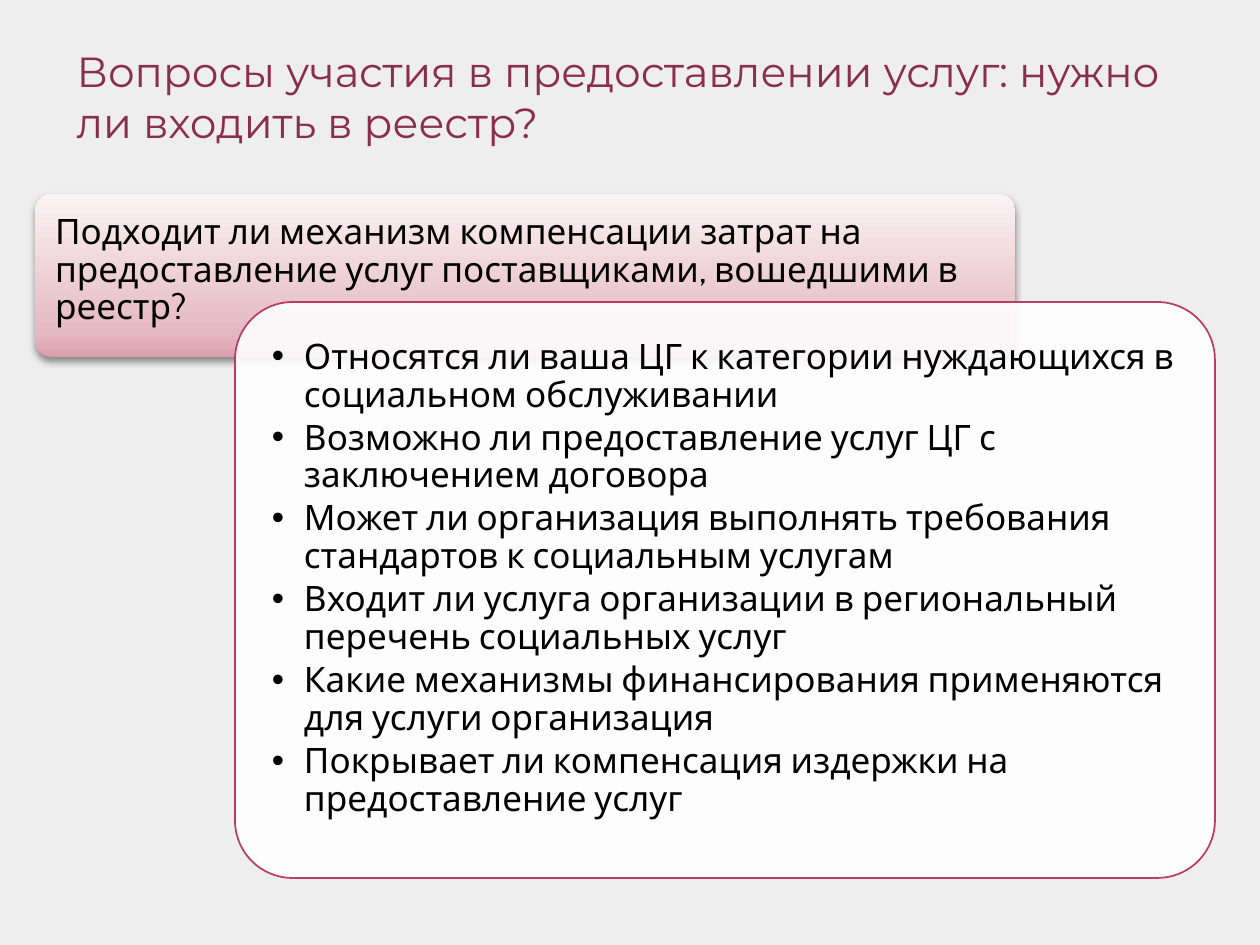
from dataclasses import dataclass

from lxml.etree import SubElement
from pptx import Presentation
from pptx.dml.color import RGBColor
from pptx.enum.shapes import MSO_SHAPE
from pptx.enum.text import MSO_ANCHOR, MSO_AUTO_SIZE, PP_ALIGN
from pptx.oxml.ns import qn
from pptx.util import Pt

TITLE = "Вопросы участия в предоставлении услуг: нужно ли входить в реестр?"
QUESTION = ("Подходит ли механизм компенсации затрат на предоставление услуг "
            "поставщиками, вошедшими в реестр?")
CHECKS = [
    "Относятся ли ваша ЦГ к категории нуждающихся в социальном обслуживании",
    "Возможно ли предоставление услуг ЦГ с заключением договора",
    "Может ли организация выполнять требования стандартов к социальным услугам",
    "Входит ли услуга организации в региональный перечень социальных услуг",
    "Какие механизмы финансирования применяются для услуги организация",
    "Покрывает ли компенсация издержки на предоставление услуг",
]


@dataclass(frozen=True)
class Theme:
    background: str = "EEEEEE"
    title: str = "8A2E4E"
    text: str = "000000"
    panel: str = "FFFFFF"
    border: str = "B83D68"
    shadow: str = "000000"
    gradient: tuple = ((0, "DC9FAD"), (15, "E5B9C3"), (100, "FAF3F5"))
    title_font: str = "Montserrat"
    body_font: str = "Cabin"
    title_size: int = 24
    body_size: int = 20


THEME = Theme()
SCALE = 914400 // 126  # EMU in one px
SLIDE_SIZE = (1260, 945)
TITLE_BOX = (64, 37, 1134, 116)
HEADER_BOX = (35, 194, 980, 163)
HEADER_TEXT_BOX = (35, 194, 980, 108)
PANEL_BOX = (235, 302, 980, 576)
PANEL_PADDING = 17
TEXT_INSET = 20
HEADER_BOTTOM_INSET = 10
BULLET_INDENT = 32


def px(value):
    return round(value * SCALE)


def emu(box):
    return [px(value) for value in box]


def rgb(code):
    return RGBColor.from_string(code)


def add_color(parent, code, alpha=None):
    color = SubElement(parent, qn("a:srgbClr"), val=code)
    if alpha is not None:
        SubElement(color, qn("a:alpha"), val=str(alpha * 1000))


def add_run(paragraph, text, font_name, size, color):
    run = paragraph.add_run()
    run.text = text
    run.font.name = font_name
    run.font.size = Pt(size)
    run.font.color.rgb = rgb(color)


def add_rounded(slide, box):
    shape = slide.shapes.add_shape(MSO_SHAPE.ROUNDED_RECTANGLE, *emu(box))
    shape.adjustments[0] = 0.1
    shape.shadow.inherit = False
    return shape


def add_header(slide):
    shape = add_rounded(slide, HEADER_BOX)
    shape.line.fill.background()
    shape.fill.gradient()
    shape.fill.gradient_angle = 90
    properties = shape.element.spPr
    stops = properties.find(".//" + qn("a:gsLst"))
    for stop in list(stops):
        stops.remove(stop)
    for position, code in THEME.gradient:
        add_color(SubElement(stops, qn("a:gs"), pos=str(position * 1000)), code)
    shadow = SubElement(properties.find(qn("a:effectLst")), qn("a:outerShdw"),
                        blurRad=str(Pt(4)), dist=str(Pt(2)), dir="5400000",
                        rotWithShape="0")
    add_color(shadow, THEME.shadow, 43)


def add_panel(slide):
    shape = add_rounded(slide, PANEL_BOX)
    shape.fill.solid()
    shape.fill.fore_color.rgb = rgb(THEME.panel)
    color = shape.element.spPr.find(qn("a:solidFill")).find(qn("a:srgbClr"))
    SubElement(color, qn("a:alpha"), val="90000")
    shape.line.color.rgb = rgb(THEME.border)
    shape.line.width = Pt(1)


def add_bullet(paragraph):
    properties = paragraph._p.get_or_add_pPr()
    properties.set("marL", str(px(BULLET_INDENT)))
    properties.set("indent", str(-px(BULLET_INDENT)))
    SubElement(properties, qn("a:buFont"), typeface="Arial")
    SubElement(properties, qn("a:buChar"), char="•")


def add_text(slide, box, texts, bottom_inset=TEXT_INSET, bulleted=False):
    frame = slide.shapes.add_textbox(*emu(box)).text_frame
    frame.word_wrap = True
    frame.auto_size = MSO_AUTO_SIZE.NONE
    frame.margin_left = frame.margin_top = frame.margin_right = px(TEXT_INSET)
    frame.margin_bottom = px(bottom_inset)
    for index, text in enumerate(texts):
        paragraph = frame.add_paragraph() if index else frame.paragraphs[0]
        if bulleted:
            add_bullet(paragraph)
        paragraph.line_spacing = 0.9
        paragraph.space_after = Pt(3 if bulleted else 7)
        add_run(paragraph, text, THEME.body_font, THEME.body_size, THEME.text)


def set_title(slide):
    title = slide.shapes.title
    title.left, title.top, title.width, title.height = emu(TITLE_BOX)
    frame = title.text_frame
    frame.word_wrap = True
    frame.auto_size = MSO_AUTO_SIZE.NONE
    frame.vertical_anchor = MSO_ANCHOR.BOTTOM
    paragraph = frame.paragraphs[0]
    paragraph.alignment = PP_ALIGN.LEFT
    add_run(paragraph, TITLE, THEME.title_font, THEME.title_size, THEME.title)


def main():
    presentation = Presentation()
    presentation.slide_width, presentation.slide_height = emu(SLIDE_SIZE)
    slide = presentation.slides.add_slide(presentation.slide_layouts[5])
    slide.background.fill.solid()
    slide.background.fill.fore_color.rgb = rgb(THEME.background)

    set_title(slide)
    add_header(slide)
    add_text(slide, HEADER_TEXT_BOX, [QUESTION], HEADER_BOTTOM_INSET)
    add_panel(slide)
    left, top, width, height = PANEL_BOX
    checks_box = (left + PANEL_PADDING, top + PANEL_PADDING,
                  width - 2 * PANEL_PADDING, height - 2 * PANEL_PADDING)
    add_text(slide, checks_box, CHECKS, bulleted=True)
    presentation.save("out.pptx")


if __name__ == "__main__":
    main()
